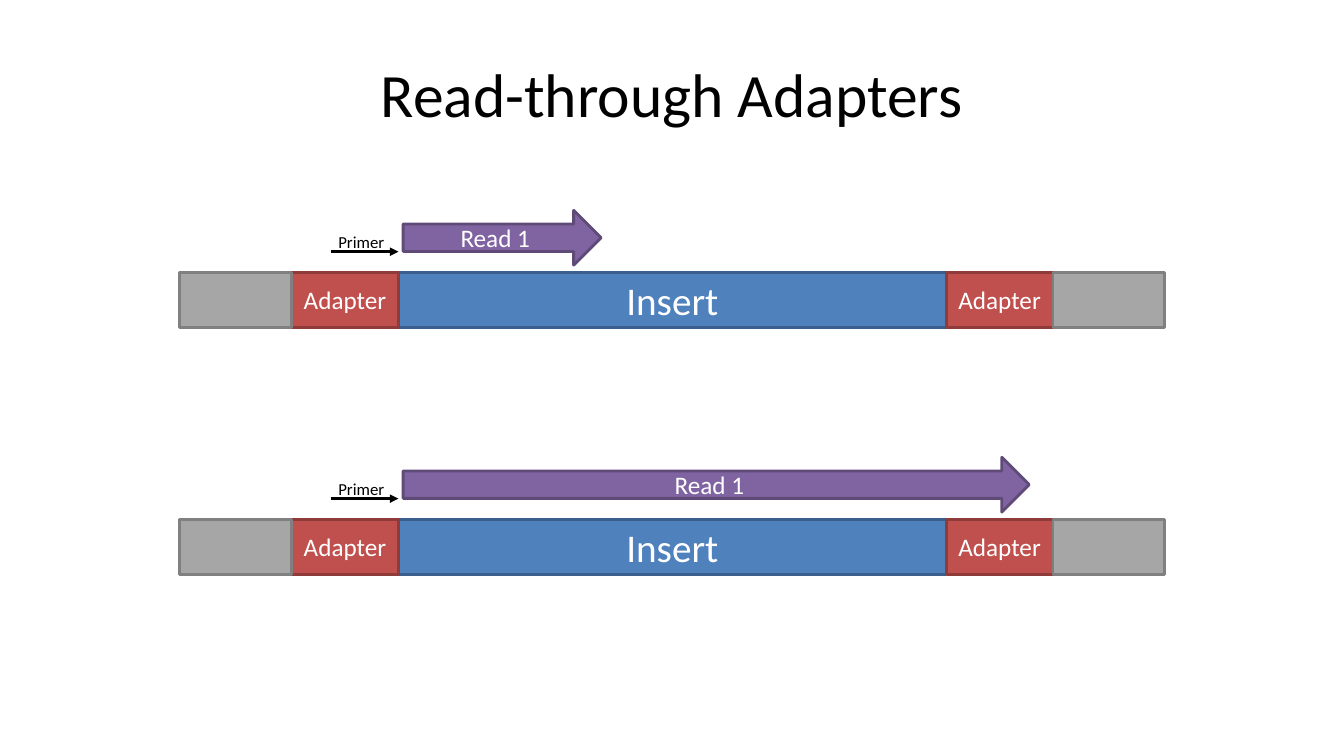
from pptx import Presentation
from pptx.dml.color import RGBColor as Rgb
from pptx.enum.shapes import MSO_CONNECTOR as Conn, MSO_SHAPE as Kind
from pptx.enum.text import MSO_ANCHOR as Anchor, MSO_AUTO_SIZE as Fit, PP_ALIGN as Align
from pptx.oxml.ns import qn
from pptx.util import Pt
from lxml.etree import SubElement as add_node

INK = {
    "black": "000000", "white": "FFFFFF",
    "blue": "4F81BD", "blue edge": "3A5F8C",
    "red": "C0504D", "red edge": "8E3B39",
    "gray": "A6A6A6", "gray edge": "808080",
    "plum": "8064A2", "plum edge": "5F4A78",
}

# Segments of the strand: left, width, colour, label, text size
PARTS = [
    (284.6, 391.2, "blue", "Insert", 28),
    (208.2, 76.4, "red", "Adapter", 18),
    (128.4, 79.6, "gray", "", 18),
    (675.8, 76.4, "red", "Adapter", 18),
    (752.2, 79.6, "gray", "", 18),
]

# Strand top and read length
ROWS = [(194.4, 141.4), (370.8, 447.2)]


def tint(name):
    return Rgb.from_string(INK[name])


def write(frame, text, size, color, align):
    para = frame.paragraphs[0]
    para.alignment = align
    run = para.add_run()
    run.text = text
    run.font.name = "Calibri"
    run.font.size = Pt(size)
    run.font.color.rgb = tint(color)


def add_block(group, kind, box, color, label, size):
    shape = group.shapes.add_shape(kind, *map(Pt, box))
    shape.shadow.inherit = False
    shape.fill.solid()
    shape.fill.fore_color.rgb = tint(color)
    shape.line.color.rgb = tint(color + " edge")
    shape.line.width = Pt(2)
    if label:
        shape.text_frame.vertical_anchor = Anchor.MIDDLE
        write(shape.text_frame, label, size, "white", Align.CENTER)


def add_arrow(group, left, right, y):
    arrow = group.shapes.add_connector(Conn.STRAIGHT, Pt(left), Pt(y), Pt(right), Pt(y))
    arrow.line.color.rgb = tint("black")
    arrow.line.width = Pt(2)
    add_node(arrow.line._get_or_add_ln(), qn("a:tailEnd"), type="triangle")
    add_node(arrow._element.spPr, qn("a:effectLst"))


def add_label(group, box, text, size):
    frame = group.shapes.add_textbox(*map(Pt, box)).text_frame
    frame.word_wrap = False
    frame.auto_size = Fit.SHAPE_TO_FIT_TEXT
    write(frame, text, size, "black", Align.LEFT)


def add_strand(slide, top, reach):
    group = slide.shapes.add_group_shape()
    for left, width, color, label, size in PARTS:
        add_block(group, Kind.RECTANGLE, (left, top, width, 39.6), color, label, size)
    # Primer and read above the strand
    add_arrow(group, 236.2, 284.6, top - 14.6)
    add_label(group, (234.6, top - 32.4, 47.6, 21.8), "Primer", 12)
    add_block(group, Kind.RIGHT_ARROW, (288, top - 44.2, reach, 39.2), "plum", "Read 1", 18)


def add_title(slide, text):
    title = slide.shapes.title
    title.left, title.top, title.width, title.height = map(Pt, (48, 21.6, 864, 90))
    title.text_frame.vertical_anchor = Anchor.MIDDLE
    write(title.text_frame, text, 44, "black", Align.CENTER)


def main():
    deck = Presentation()
    deck.slide_width, deck.slide_height = Pt(960), Pt(540)
    slide = deck.slides.add_slide(deck.slide_layouts[5])
    add_title(slide, "Read-through Adapters")
    for top, reach in ROWS:
        add_strand(slide, top, reach)
    deck.save("out.pptx")


if __name__ == "__main__":
    main()
